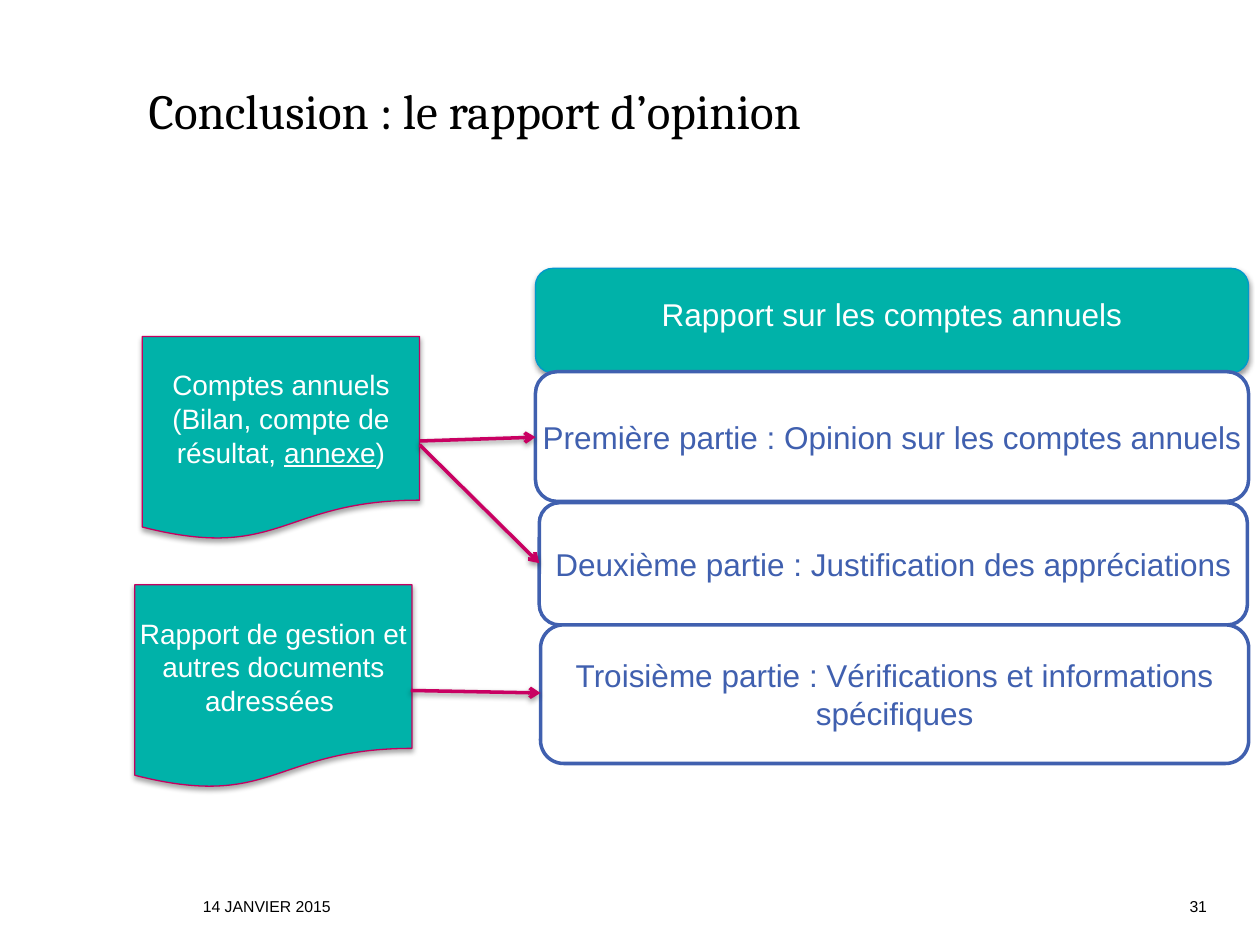
"""Build the concluding slide on the audit opinion report."""
from lxml import etree
from pptx import Presentation
from pptx.dml.color import RGBColor
from pptx.enum.shapes import MSO_CONNECTOR, MSO_SHAPE
from pptx.enum.text import MSO_ANCHOR, MSO_AUTO_SIZE, PP_ALIGN
from pptx.oxml.ns import qn
from pptx.util import Inches, Pt

ROUND = MSO_SHAPE.ROUNDED_RECTANGLE
PAGE = MSO_SHAPE.FLOWCHART_DOCUMENT
LINE = MSO_CONNECTOR.STRAIGHT
MIDDLE, BOTTOM = MSO_ANCHOR.MIDDLE, MSO_ANCHOR.BOTTOM
LEFT, CENTER, RIGHT = PP_ALIGN.LEFT, PP_ALIGN.CENTER, PP_ALIGN.RIGHT
FIXED = MSO_AUTO_SIZE.NONE
HEX = {"teal": "00B2A9", "cyan": "0099CC", "blue": "4060AF", "plum": "C50060",
       "pink": "C90062", "white": "FFFFFF", "black": "000000"}
RGB = {name: RGBColor.from_string(code) for name, code in HEX.items()}


def write(shape, parts, size, color, align, anchor, font="Arial"):
    frame = shape.text_frame
    frame.word_wrap = True
    frame.auto_size = FIXED
    frame.vertical_anchor = anchor
    frame.margin_left = frame.margin_right = 0
    frame.margin_top = frame.margin_bottom = 0
    para = frame.paragraphs[0]
    para.alignment = align
    for part in parts:
        run = para.add_run()
        run.text = part
        run.font.name = font
        run.font.size = Pt(size)
        run.font.color.rgb = RGB[color]
    return para


def shade(shape, alpha, dist):
    props = shape._element.spPr
    list_ = etree.SubElement(props, qn("a:effectLst"))
    drop = etree.SubElement(list_, qn("a:outerShdw"), blurRad=str(Pt(3.1)),
                            dist=str(Pt(dist)), dir="5400000", rotWithShape="0")
    tone = etree.SubElement(drop, qn("a:srgbClr"), val=HEX["black"])
    etree.SubElement(tone, qn("a:alpha"), val=str(alpha * 1000))


deck = Presentation()
deck.slide_width, deck.slide_height = Inches(10), Inches(7.5)
slide = deck.slides.add_slide(deck.slide_layouts[5])
shapes = slide.shapes

title = shapes.title
title.left, title.top = Inches(1.18), Inches(0)
title.width, title.height = Inches(8.25), Inches(1.11)
write(title, ["Conclusion : le rapport d’opinion"], 28, "black", LEFT, BOTTOM, "Cambria")

head = ("teal", "cyan", 0.75, "white", 18, (38, 1.6))
part = ("white", "blue", 2, "blue", 18, None)
doc = ("teal", "plum", 0.75, "white", 16, (35, 1.8))
boxes = [
    (ROUND, 4.25, 2.13, 5.66, 0.83, head, ["Rapport sur les comptes annuels"]),
    (ROUND, 4.25, 2.95, 5.66, 1.03, part,
     ["Première partie : Opinion sur les comptes annuels"]),
    (ROUND, 4.28, 3.99, 5.62, 0.97, part,
     ["Deuxième partie : Justification des appréciations"]),
    (ROUND, 4.29, 4.96, 5.62, 1.1, part,
     ["Troisième partie : Vérifications et informations spécifiques"]),
    (PAGE, 1.13, 2.67, 2.2, 1.62, doc,
     ["Comptes annuels (Bilan, compte de résultat, ", "annexe", ")"]),
    (PAGE, 1.07, 4.64, 2.2, 1.62, doc,
     ["Rapport de gestion et autres documents adressées "]),
]
for kind, left, top, width, height, style, parts in boxes:
    fill, edge, weight, color, size, drop = style
    box = shapes.add_shape(kind, Inches(left), Inches(top), Inches(width), Inches(height))
    box.fill.solid()
    box.fill.fore_color.rgb = RGB[fill]
    box.line.color.rgb = RGB[edge]
    box.line.width = Pt(weight)
    if drop:
        shade(box, *drop)
    else:
        box.shadow.inherit = False
    para = write(box, parts, size, color, CENTER, MIDDLE)
    if style is head:
        para.line_spacing = 0.5
    for run in para.runs:
        if run.text == "annexe":
            run.font.underline = True

for ends in [(3.33, 3.5, 4.25, 3.47), (3.33, 3.53, 4.28, 4.47), (3.26, 5.48, 4.29, 5.5)]:
    arrow = shapes.add_connector(LINE, *[Inches(end) for end in ends])
    arrow.line.color.rgb = RGB["pink"]
    arrow.line.width = Pt(2)
    etree.SubElement(arrow.line._get_or_add_ln(), qn("a:tailEnd"), type="arrow")
    shade(arrow, 38, 1.6)

for text, left, width, align in [("14 JANVIER 2015", 1.61, 7.09, LEFT),
                                 ("31", 8.78, 0.8, RIGHT)]:
    foot = shapes.add_textbox(Inches(left), Inches(7.07), Inches(width), Inches(0.2))
    write(foot, [text], 9, "black", align, BOTTOM)

deck.save("out.pptx")
